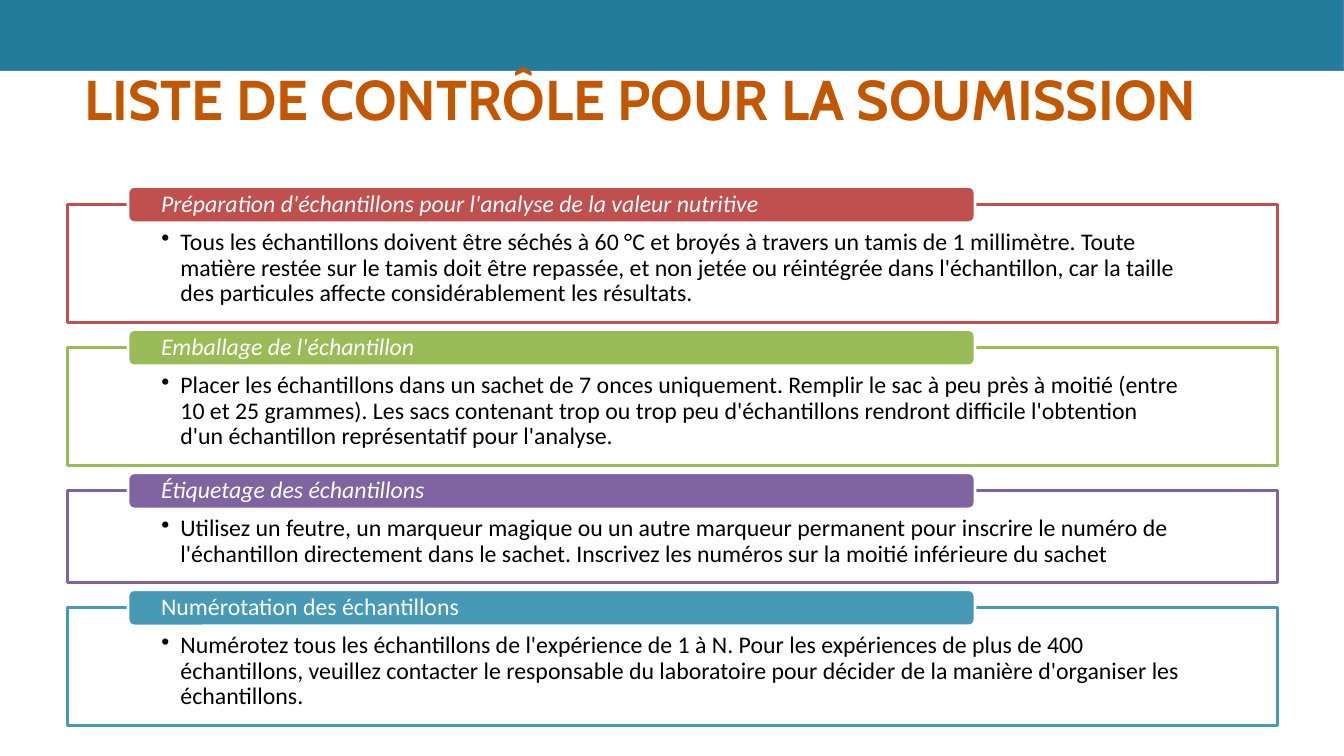
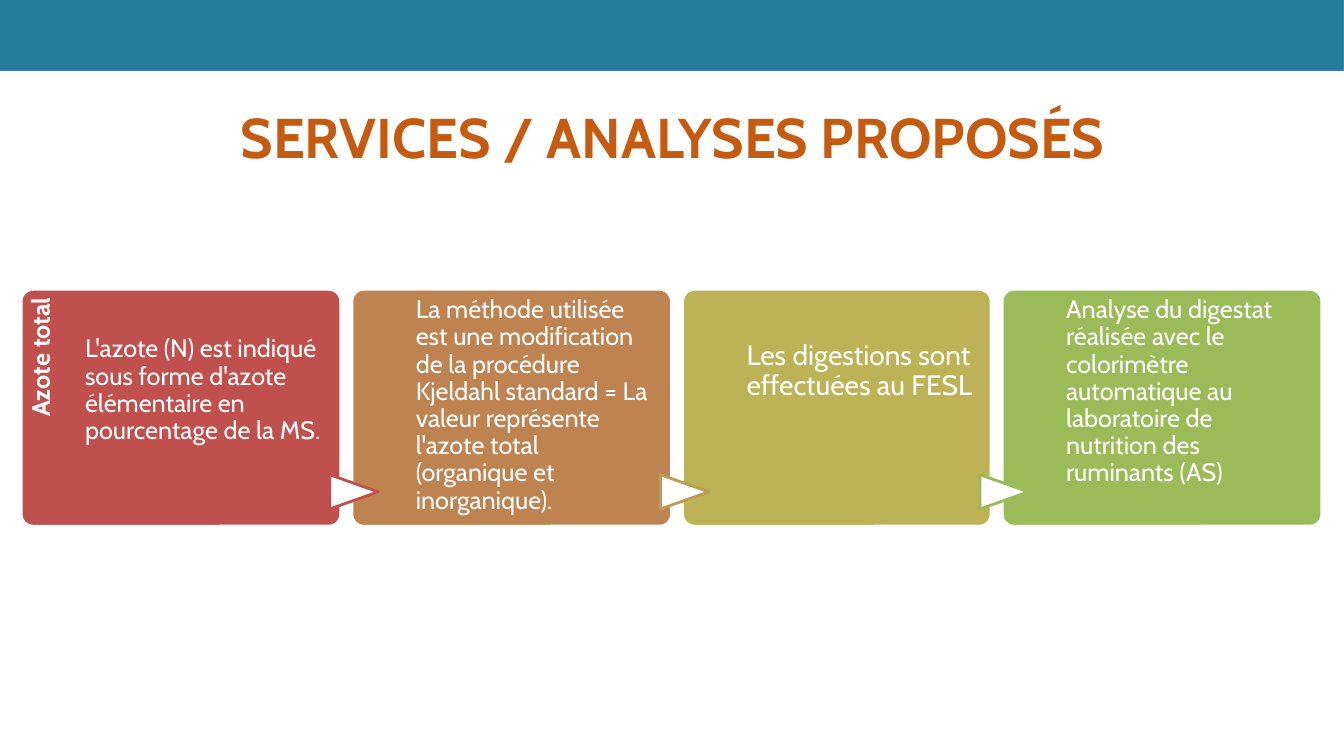
from lxml import etree
from pptx import Presentation
from pptx.dml.color import RGBColor
from pptx.enum.shapes import MSO_SHAPE
from pptx.enum.text import MSO_ANCHOR, MSO_AUTO_SIZE, PP_ALIGN
from pptx.oxml.ns import qn
from pptx.util import Inches, Pt

WHITE = RGBColor(0xFF, 0xFF, 0xFF)
BLACK = RGBColor(0, 0, 0)
BAND = RGBColor(0x23, 0x7C, 0x9A)
BAND_LINE = RGBColor(0x4B, 0x7E, 0xBC)
RUST = RGBColor(0xC2, 0x57, 0x00)
ORANGE = RGBColor(0xC5, 0x5A, 0x11)
RED = RGBColor(0xC0, 0x50, 0x4D)
GREEN = RGBColor(0x9B, 0xBB, 0x59)
PURPLE = RGBColor(0x80, 0x64, 0xA2)
TEAL = RGBColor(0x47, 0x99, 0xB5)
BROWN = RGBColor(0xBE, 0x83, 0x51)
OCHRE = RGBColor(0xBD, 0x9B, 0x53)
KHAKI = RGBColor(0xBD, 0xB2, 0x55)

HEAD_FONT, BODY_FONT = "Cabin", "Calibri"

# heading, body, colour, body height, italic heading
CHECKLIST = [
    ("Préparation d'échantillons pour l'analyse de la valeur nutritive",
     "Tous les échantillons doivent être séchés à 60 °C et broyés à travers un tamis "
     "de 1 millimètre. Toute matière restée sur le tamis doit être repassée, et non "
     "jetée ou réintégrée dans l'échantillon, car la taille des particules affecte "
     "considérablement les résultats.", RED, 1.17, True),
    ("Emballage de l'échantillon",
     "Placer les échantillons dans un sachet de 7 onces uniquement. Remplir le sac à "
     "peu près à moitié (entre 10 et 25 grammes). Les sacs contenant trop ou trop peu "
     "d'échantillons rendront difficile l'obtention d'un échantillon représentatif "
     "pour l'analyse.", GREEN, 1.17, True),
    ("Étiquetage des échantillons",
     "Utilisez un feutre, un marqueur magique ou un autre marqueur permanent pour "
     "inscrire le numéro de l'échantillon directement dans le sachet. Inscrivez les "
     "numéros sur la moitié inférieure du sachet", PURPLE, 0.91, True),
    ("Numérotation des échantillons",
     "Numérotez tous les échantillons de l'expérience de 1 à N. Pour les expériences "
     "de plus de 400 échantillons, veuillez contacter le responsable du laboratoire "
     "pour décider de la manière d'organiser les échantillons.", TEAL, 1.17, False),
]

# text, fill, width, text size, top inset, outline of the arrow leading in
STEPS = [
    ("L'azote (N) est indiqué sous forme d'azote élémentaire en pourcentage de la MS.",
     RED, 3.17, 18, 0.43, None),
    ("La méthode utilisée est une modification de la procédure Kjeldahl standard = "
     "La valeur représente l'azote total (organique et inorganique).",
     BROWN, 3.17, 18, 0.04, RED),
    ("Les digestions sont effectuées au FESL", KHAKI, 3.06, 20, 0.48, OCHRE),
    ("Analyse du digestat réalisée avec le colorimètre automatique au laboratoire de "
     "nutrition des ruminants (AS)", GREEN, 3.17, 18, 0.04, GREEN),
]
STEP_LABEL = "Azote total"


def add_box(slide, kind, at, fill, line, weight=2):
    sp = slide.shapes.add_shape(kind, *map(Inches, at))
    sp.shadow.inherit = False
    sp.fill.solid()
    sp.fill.fore_color.rgb = fill
    sp.line.color.rgb = line
    sp.line.width = Pt(weight)
    return sp


def set_text(sp, words, font, size, color, insets, anchor=MSO_ANCHOR.TOP,
             align=PP_ALIGN.LEFT, spacing=0.9, bold=False, italic=False, bullet=False):
    """Write one paragraph; insets are left, top, right, bottom."""
    tf = sp.text_frame
    tf.word_wrap = True
    tf.auto_size = MSO_AUTO_SIZE.NONE
    tf.vertical_anchor = anchor
    tf.margin_left, tf.margin_top, tf.margin_right, tf.margin_bottom = map(Inches, insets)
    tf.text = words
    p = tf.paragraphs[0]
    if bullet:
        pPr = p._p.get_or_add_pPr()
        pPr.set("marL", str(Inches(0.19)))
        pPr.set("indent", str(-Inches(0.19)))
        etree.SubElement(pPr, qn("a:buChar")).set("char", "•")
    p.alignment = align
    p.line_spacing = spacing
    f = p.runs[0].font
    f.name, f.size, f.bold, f.italic = font, Pt(size), bold, italic
    f.color.rgb = color


def add_slide(prs, title, left, top, color):
    slide = prs.slides.add_slide(prs.slide_layouts[5])
    sp = slide.shapes.title
    sp.left, sp.top, sp.width, sp.height = map(Inches, (left, top, 12, 0.65))
    set_text(sp, title, HEAD_FONT, 40, color, (0.1, 0.05, 0.1, 0),
             align=PP_ALIGN.CENTER, spacing=1.0, bold=True)
    return slide


def move_band_to_master(prs, slide):
    """Draw the top band once, behind everything, on the slide master."""
    band = add_box(slide, MSO_SHAPE.RECTANGLE, (0, 0, 13.33, 0.7), BAND, BAND_LINE, 0.75)
    prs.slide_master.shapes.element.insert(2, band.element)


def draw_checklist(slide):
    top, gap = 2.03, 0.25
    for heading, body, color, height, italic in CHECKLIST:
        frame = add_box(slide, MSO_SHAPE.RECTANGLE, (0.67, top, 12, height), WHITE, color)
        set_text(frame, body, BODY_FONT, 17, BLACK, (0.93, 0.25, 0.93, 0.13), bullet=True)
        tag = add_box(slide, MSO_SHAPE.ROUNDED_RECTANGLE, (1.27, top - 0.18, 8.4, 0.36),
                      color, WHITE)
        set_text(tag, heading, BODY_FONT, 17, WHITE, (0.31, 0, 0.31, 0),
                 anchor=MSO_ANCHOR.MIDDLE, italic=italic)
        top += height + gap


def draw_steps(slide):
    left, gap = 0.21, 0.11
    for words, fill, width, size, inset_top, arrow_line in STEPS:
        card = add_box(slide, MSO_SHAPE.ROUNDED_RECTANGLE, (left, 2.87, width, 2.35),
                       fill, WHITE)
        card.adjustments[0] = 0.05
        set_text(card, words, HEAD_FONT, size, WHITE, (0.6, inset_top, 0.14, 0))
        if arrow_line is not None:
            arrow = add_box(slide, MSO_SHAPE.FLOWCHART_EXTRACT,
                            (left - 0.15, 4.64, 0.34, 0.48), WHITE, arrow_line)
            arrow.rotation = 90
        left += width + gap
    label = slide.shapes.add_textbox(*map(Inches, (-0.44, 3.51, 1.93, 0.63)))
    label.rotation = 270
    set_text(label, STEP_LABEL, HEAD_FONT, 18, WHITE, (0, 0.07, 0.09, 0),
             align=PP_ALIGN.RIGHT, bold=True)


def main():
    prs = Presentation()
    prs.slide_width, prs.slide_height = Inches(13.33), Inches(7.5)
    checklist = add_slide(prs, "LISTE DE CONTRÔLE POUR LA SOUMISSION", 0.35, 0.59, RUST)
    move_band_to_master(prs, checklist)
    draw_checklist(checklist)
    draw_steps(add_slide(prs, "SERVICES / ANALYSES PROPOSÉS", 0.67, 0.97, ORANGE))
    prs.save("out.pptx")


if __name__ == "__main__":
    main()
